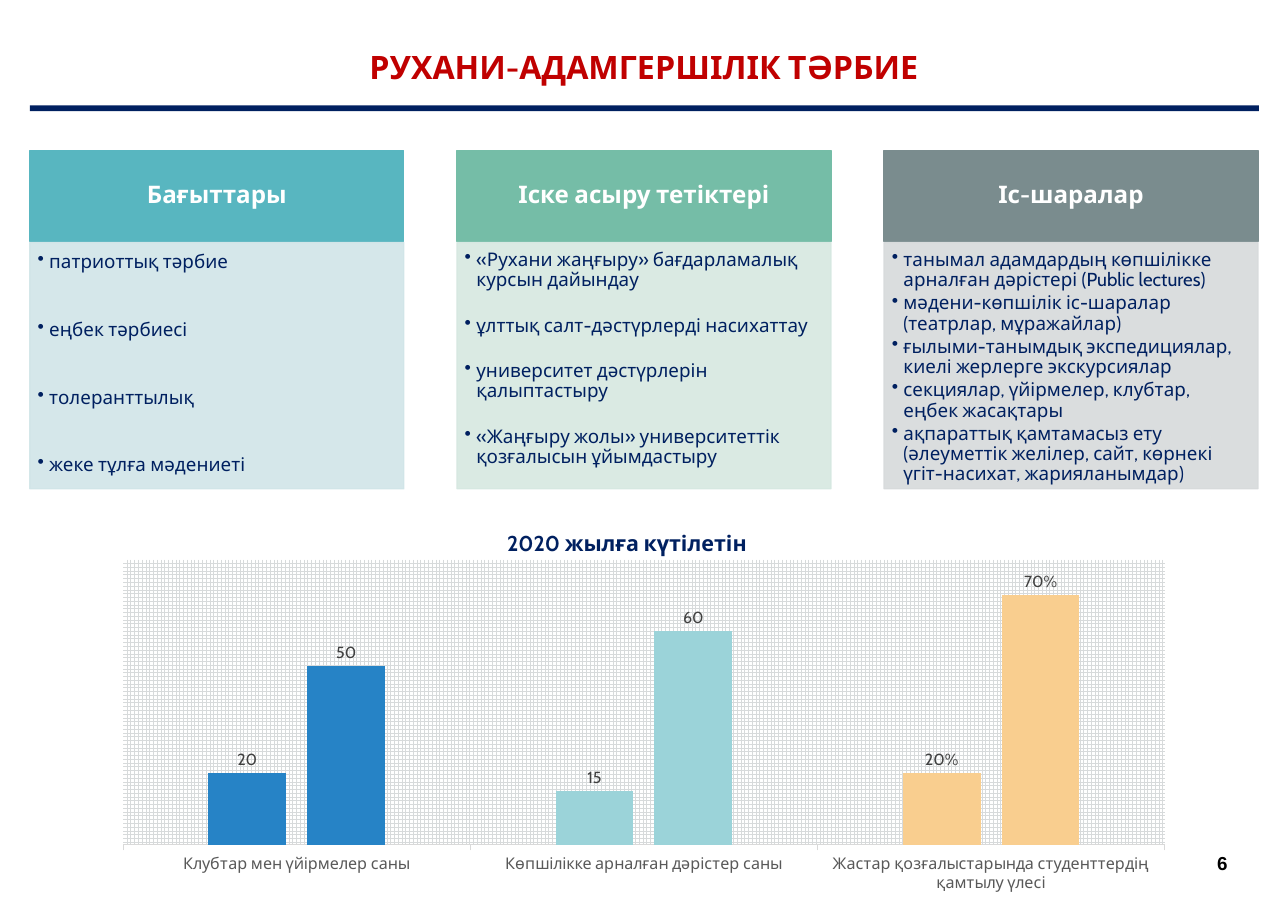
from dataclasses import dataclass

from lxml.etree import SubElement
from pptx import Presentation
from pptx.chart.data import CategoryChartData
from pptx.dml.color import RGBColor
from pptx.enum.chart import XL_CHART_TYPE, XL_LABEL_POSITION, XL_TICK_LABEL_POSITION, XL_TICK_MARK
from pptx.enum.shapes import MSO_SHAPE
from pptx.enum.text import MSO_ANCHOR, PP_ALIGN
from pptx.oxml import parse_xml
from pptx.oxml.ns import nsdecls, qn
from pptx.util import Inches, Pt


@dataclass(frozen=True)
class Theme:
    font: str = "Cabin"
    red: str = "C00000"
    navy: str = "002060"
    white: str = "FFFFFF"
    black: str = "000000"
    grid: str = "D7DADB"
    axis: str = "D9D9D9"
    label: str = "595959"
    value: str = "404040"
    series: tuple[str, ...] = ("2683C6", "58B6C0")
    bars: tuple[str, ...] = ("2683C6", "9BD3D9", "F9CE8F")
    title: int = 24
    head: int = 18
    sub: int = 16
    body: int = 14
    chart: int = 12


@dataclass(frozen=True)
class Card:
    head: str
    items: tuple[str, ...]
    dark: str
    pale: str
    gap: float
    line: float = 0.9


T = Theme()
CARDS = (
    Card("Бағыттары", ("патриоттық тәрбие", "еңбек тәрбиесі", "толеранттылық", "жеке тұлға мәдениеті"),
         "58B6C0", "D1E5E8", 33.6, 1.0),
    Card("Іске асыру тетіктері",
         ("«Рухани жаңғыру» бағдарламалық курсын дайындау",
          "ұлттық салт-дәстүрлерді насихаттау",
          "университет дәстүрлерін қалыптастыру",
          "«Жаңғыру жолы» университеттік қозғалысын ұйымдастыру"),
         "75BDA7", "D6E8E1", 18.7),
    Card("Іс-шаралар",
         ("танымал адамдардың көпшілікке арналған дәрістері (Public lectures)",
          "мәдени-көпшілік іс-шаралар (театрлар, мұражайлар)",
          "ғылыми-танымдық экспедициялар, киелі жерлерге экскурсиялар",
          "секциялар, үйірмелер, клубтар, еңбек жасақтары",
          "ақпараттық қамтамасыз ету (әлеуметтік желілер, сайт, көрнекі үгіт-насихат, жарияланымдар)"),
         "7A8C8E", "D7DADB", 2.1),
)
CATS = ("Клубтар мен үйірмелер саны", "Көпшілікке арналған дәрістер саны",
        "Жастар қозғалыстарында студенттердің қамтылу үлесі")
ROWS = ((20, 15, 20), (50, 60, 70))


def style(font, size: int, color: str, bold: bool = False, name: str = T.font) -> None:
    """Set the face, size and colour of a font."""
    font.name, font.size, font.bold = name, Pt(size), bold
    font.color.rgb = RGBColor.from_string(color)


def write(frame, *lines: str, size: int, color: str, bold: bool = False, name: str = T.font,
          align=PP_ALIGN.CENTER, anchor=MSO_ANCHOR.TOP, pad=(0.1, 0.05, 0.1, 0.05),
          wrap: bool = True, line: float = 1.0, gap: float = 0, dots: bool = False) -> None:
    """Fill a text frame with one paragraph per line."""
    frame.word_wrap, frame.vertical_anchor = wrap, anchor
    frame.margin_left, frame.margin_top, frame.margin_right, frame.margin_bottom = map(Inches, pad)
    for num, text in enumerate(lines):
        para = frame.add_paragraph() if num else frame.paragraphs[0]
        para.alignment, para.line_spacing, para.space_after = align, line, Pt(gap)
        if dots:
            props = para._p.get_or_add_pPr()
            props.set("marL", str(Inches(0.12)))
            props.set("indent", str(-Inches(0.12)))
            SubElement(props, qn("a:buChar")).set("char", "•")
        run = para.add_run()
        run.text = text
        style(run.font, size, color, bold, name)


def add_text(slide, box: tuple[float, ...], text: str, **form) -> None:
    """Add a text box."""
    write(slide.shapes.add_textbox(*map(Inches, box)).text_frame, text, **form)


def add_rect(slide, box: tuple[float, ...], color: str, edge: bool = True, alpha: int = 100):
    """Add a flat rectangle with an optional matching edge."""
    rect = slide.shapes.add_shape(MSO_SHAPE.RECTANGLE, *map(Inches, box))
    rect.shadow.inherit = False
    rect.fill.solid()
    rect.fill.fore_color.rgb = RGBColor.from_string(color)
    if edge:
        rect.line.width = Pt(1)
        rect.line.color.rgb = RGBColor.from_string(color)
    else:
        rect.line.fill.background()
    if alpha < 100:
        for tint in rect._element.spPr.iter(qn("a:srgbClr")):
            SubElement(tint, qn("a:alpha")).set("val", str(alpha * 1000))
    return rect


def add_card(slide, card: Card, left: float) -> None:
    """Add a heading block with its bullet list below."""
    head = add_rect(slide, (left, 1.56, 3.87, 0.94), card.dark)
    write(head.text_frame, card.head, size=T.head, color=T.white, bold=True,
          anchor=MSO_ANCHOR.MIDDLE, pad=(0.14, 0.08, 0.14, 0.08), line=0.9)
    body = add_rect(slide, (left, 2.51, 3.87, 2.55), card.pale, alpha=90)
    write(body.text_frame, *card.items, size=T.body, color=T.navy, align=PP_ALIGN.LEFT,
          pad=(0.08, 0.08, 0.11, 0.12), line=card.line, gap=card.gap, dots=True)


def set_plot(chart) -> None:
    """Place the plot area and give it a grid pattern."""
    plot = chart._chartSpace.chart.plotArea
    for old in plot.findall(qn("c:layout")):
        plot.remove(old)
    sides = "".join(f'<c:{key} val="{val}"/>' for key, val in
                    (("layoutTarget", "inner"), ("xMode", "edge"), ("yMode", "edge"),
                     ("x", 0.02), ("y", 0.02), ("w", 0.96), ("h", 0.82)))
    plot.insert(0, parse_xml(
        f'<c:layout {nsdecls("c")}><c:manualLayout>{sides}</c:manualLayout></c:layout>'))
    plot.append(parse_xml(
        f'<c:spPr {nsdecls("c", "a")}><a:pattFill prst="lgGrid">'
        f'<a:fgClr><a:srgbClr val="{T.grid}"/></a:fgClr>'
        f'<a:bgClr><a:srgbClr val="{T.white}"/></a:bgClr></a:pattFill></c:spPr>'))


def add_bars(slide) -> None:
    """Add the column chart of expected results."""
    data = CategoryChartData()
    data.categories = CATS
    for num, row in enumerate(ROWS, 1):
        data.add_series(f"Series {num}", row)
    chart = slide.shapes.add_chart(XL_CHART_TYPE.COLUMN_CLUSTERED,
                                   *map(Inches, (1.05, 5.72, 11.23, 3.6)), data).chart
    chart.has_legend = chart.has_title = False
    style(chart.font, 10, T.black)
    axis = chart.value_axis
    axis.minimum_scale, axis.maximum_scale = 0, 80
    axis.has_major_gridlines = axis.visible = False
    axis = chart.category_axis
    axis.major_tick_mark = XL_TICK_MARK.OUTSIDE
    axis.tick_label_position = XL_TICK_LABEL_POSITION.LOW
    axis.format.line.width = Pt(0.75)
    axis.format.line.color.rgb = RGBColor.from_string(T.axis)
    style(axis.tick_labels.font, T.chart, T.label)
    plot = chart.plots[0]
    plot.gap_width, plot.overlap, plot.vary_by_categories = 219, -27, False
    for row, series, color in zip(ROWS, plot.series, T.series):
        series.format.fill.solid()
        series.format.fill.fore_color.rgb = RGBColor.from_string(color)
        for num, tint in enumerate(T.bars):
            fill = series.points[num].format.fill
            fill.solid()
            fill.fore_color.rgb = RGBColor.from_string(tint)
        marks = series.data_labels
        marks.show_value, marks.position = True, XL_LABEL_POSITION.OUTSIDE_END
        style(marks.font, T.chart, T.value)
        share = series.points[2].data_label
        run = share.text_frame.paragraphs[0].add_run()
        run.text = f"{row[2]}%"
        style(run.font, T.chart, T.value)
        share.position = XL_LABEL_POSITION.OUTSIDE_END
    set_plot(chart)


def main() -> None:
    """Build the slide and save it."""
    deck = Presentation()
    deck.slide_width, deck.slide_height = Inches(13.33), Inches(9.45)
    slide = deck.slides.add_slide(deck.slide_layouts[6])
    add_text(slide, (0, 0, 13.33, 0.94), "РУХАНИ-АДАМГЕРШІЛІК ТӘРБИЕ", size=T.title,
             color=T.red, bold=True, anchor=MSO_ANCHOR.BOTTOM, line=0.9)
    add_rect(slide, (0.31, 1.09, 12.72, 0.06), T.navy, edge=False)
    for num, card in enumerate(CARDS):
        add_card(slide, card, 0.31 + 4.42 * num)
    add_text(slide, (4.76, 5.44, 3.46, 0.37), "2020 жылға күтілетін", size=T.sub,
             color=T.navy, bold=True, wrap=False)
    add_bars(slide)
    add_text(slide, (12.27, 8.77, 0.76, 0.34), "6", size=T.body, color=T.black,
             bold=True, name="Arial")
    deck.save("out.pptx")


if __name__ == "__main__":
    main()
